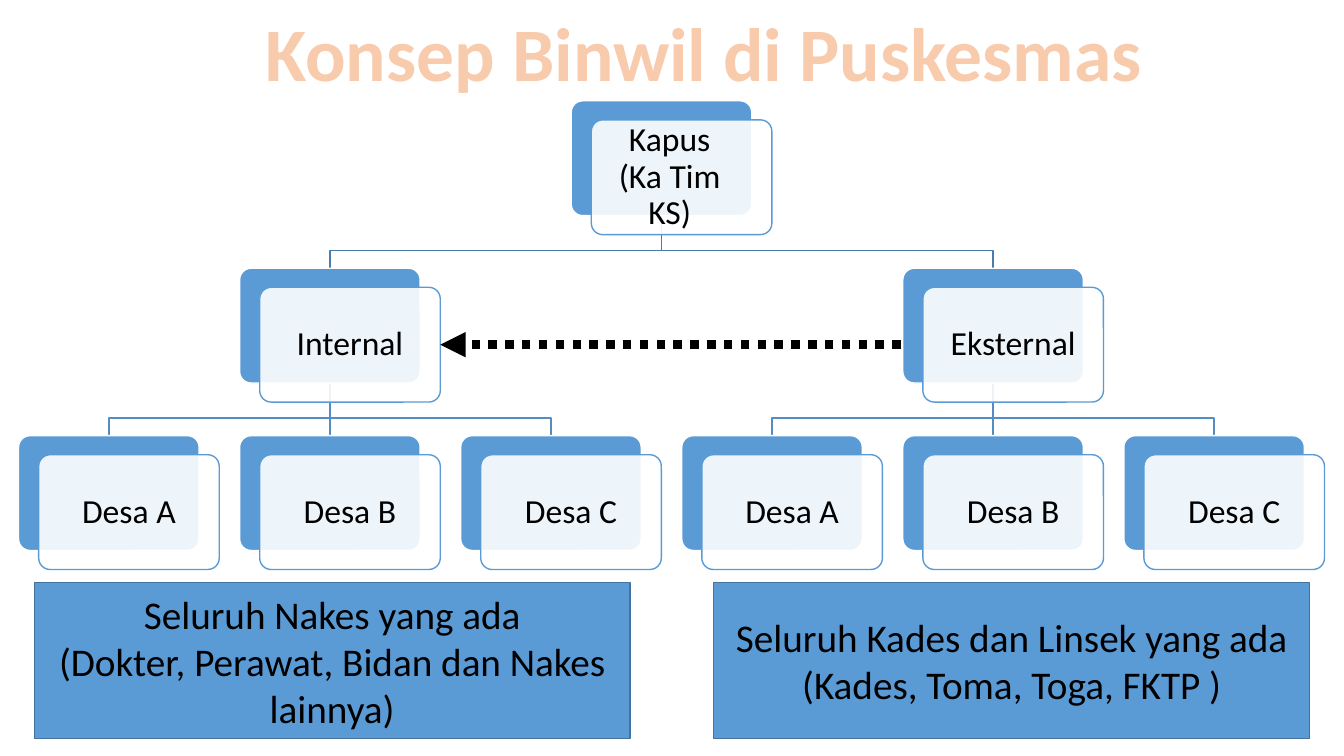
from lxml.etree import SubElement
from pptx import Presentation
from pptx.dml.color import RGBColor
from pptx.enum.dml import MSO_LINE
from pptx.enum.shapes import MSO_CONNECTOR, MSO_SHAPE
from pptx.enum.text import MSO_ANCHOR, PP_ALIGN
from pptx.oxml.ns import qn
from pptx.util import Pt

BLUE = "5B9BD5"
WIDE, HIGH = 129, 82          # card size
STEP_X, STEP_Y = 157.9, 119.6  # distance between columns and rows
SHIFT_X, SHIFT_Y = 14.35, 13.6  # front card against back card


def color(code):
    return RGBColor.from_string(code)


def write(frame, lines, size, ink="000000", bold=False):
    frame.vertical_anchor = MSO_ANCHOR.MIDDLE
    for i, line in enumerate(lines):
        para = frame.paragraphs[0] if i == 0 else frame.add_paragraph()
        para.text = line
        para.alignment = PP_ALIGN.CENTER
        font = para.font
        font.name, font.size, font.bold = "Calibri", Pt(size), bold
        font.color.rgb = color(ink)


def block(slide, kind, box, fill, edge):
    shape = slide.shapes.add_shape(kind, *map(Pt, box))
    shape.shadow.inherit = False
    shape.fill.solid()
    shape.fill.fore_color.rgb = color(fill)
    shape.line.color.rgb = color(edge)
    shape.line.width = Pt(1)
    shape.text_frame.word_wrap = True
    return shape


def wire(slide, start, end, ink, width):
    line = slide.shapes.add_connector(
        MSO_CONNECTOR.STRAIGHT, *map(Pt, start + end))
    SubElement(line._element.spPr, qn("a:effectLst"))
    line.line.color.rgb = color(ink)
    line.line.width = Pt(width)
    return line


def card(slide, left, top, lines):
    """Draw a back card with a veiled front card; return both."""
    kind = MSO_SHAPE.ROUNDED_RECTANGLE
    back = block(slide, kind, (left, top, WIDE, HIGH), BLUE, "FFFFFF")
    front = block(slide, kind, (left + SHIFT_X, top + SHIFT_Y, WIDE, HIGH),
                  "FFFFFF", BLUE)
    for shape in (back, front):
        shape.adjustments[0] = 0.1
    tint = front.fill._xPr.find(".//" + qn("a:srgbClr"))
    SubElement(tint, qn("a:alpha"), val="90000")
    frame = front.text_frame
    frame.margin_left = frame.margin_right = Pt(9.5)
    write(frame, lines, 24)
    for para in frame.paragraphs:
        para.line_spacing = 0.9
    return back, front


def link(slide, top, low, ink):
    """Join two back cards, behind everything drawn so far."""
    x, y = top.left + top.width // 2, top.top + top.height
    to_x, to_y = low.left + low.width // 2, low.top
    if abs(x - to_x) < Pt(1):
        line = wire(slide, (0, 0), (0, 0), ink, 1)
        line.begin_connect(top, 2)
        line.end_connect(low, 0)
    else:
        bend = y + Pt(25)
        path = slide.shapes.build_freeform(x, y)
        path.add_line_segments([(x, bend), (to_x, bend), (to_x, to_y)],
                               close=False)
        line = path.convert_to_shape()
        line.shadow.inherit = False
        line.fill.background()
        line.line.color.rgb = color(ink)
        line.line.width = Pt(1)
    slide.shapes._spTree.insert(2, line._element)


def chart(slide, left, top):
    """Draw the organisation tree from its left top corner."""
    def place(col, row, *lines):
        return card(slide, left + col * STEP_X, top + row * STEP_Y, lines)

    head, face = place(2.5, 0, "Kapus", "(Ka Tim KS)")
    first = face.text_frame.paragraphs[0]
    first._p.get_or_add_pPr().set("marR", str(Pt(17)))
    fronts = []
    for name, col in (("Internal", 1), ("Eksternal", 4)):
        team, front = place(col, 1, name)
        fronts.append(front)
        link(slide, head, team, "497CAB")
        for i, mark in enumerate("ABC"):
            desa, _ = place(col - 1 + i, 2, f"Desa {mark}")
            link(slide, team, desa, "538DC1")
    return fronts


def arrow(slide, start, target):
    line = wire(slide, start, start, "000000", 6)
    line.end_connect(target, 3)
    line.line.dash_style = MSO_LINE.ROUND_DOT
    SubElement(line.line._get_or_add_ln(), qn("a:tailEnd"), type="triangle")


def title(slide, box, text):
    frame = slide.shapes.add_textbox(*map(Pt, box)).text_frame
    frame.word_wrap = False
    write(frame, [text], 54, "F8CBAD", True)


def panel(slide, box, lines):
    shape = block(slide, MSO_SHAPE.RECTANGLE, box, BLUE, "43739E")
    write(shape.text_frame, lines, 28)


def main():
    deck = Presentation()
    deck.slide_width, deck.slide_height = Pt(960), Pt(540)
    slide = deck.slides.add_slide(deck.slide_layouts[6])
    inner, outer = chart(slide, 13.25, 72)
    title(slide, (179, 0, 647.5, 72.7), "Konsep Binwil di Puskesmas")
    panel(slide, (24.5, 416, 425.5, 111.6),
          ["Seluruh Nakes yang ada",
           "(Dokter, Perawat, Bidan dan Nakes lainnya)"])
    panel(slide, (509.8, 416, 425.5, 111.6),
          ["Seluruh Kades dan Linsek yang ada", "(Kades, Toma, Toga, FKTP )"])
    middle = outer.top.pt + HIGH / 2
    arrow(slide, (outer.left.pt - SHIFT_X - 1.5, middle), inner)
    deck.save("out.pptx")


if __name__ == "__main__":
    main()
